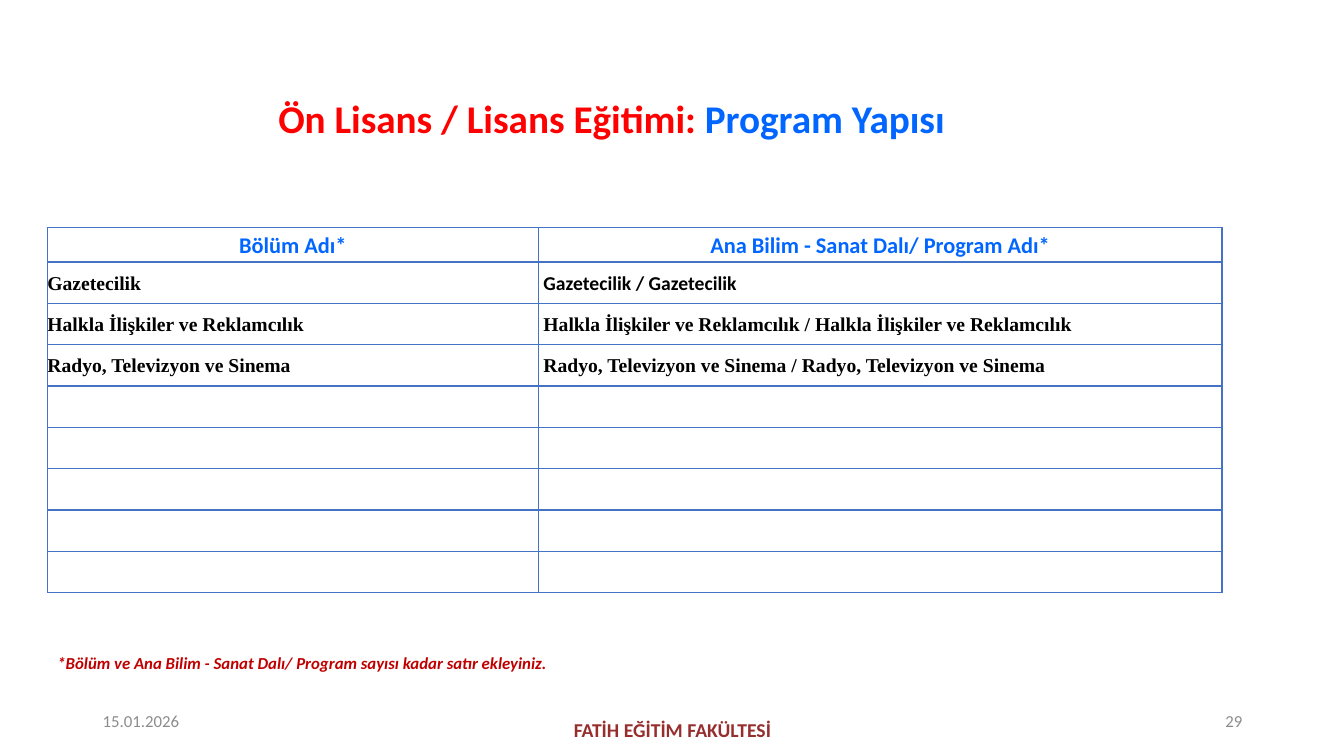
import pptx
import pptx.util
import pptx.dml.color
import pptx.enum.text
import pptx.oxml
import pptx.oxml.ns
from pptx.util import Inches

ALIGN = pptx.enum.text.PP_ALIGN
MIDDLE = pptx.enum.text.MSO_ANCHOR.MIDDLE
BLUE = "0066FF"
GREY = "8C8C8C"
BORDER = "4472C4"
HEADINGS = ["Bölüm Adı*", "Ana Bilim - Sanat Dalı/ Program Adı*"]
PROGRAMS = [
    ("Gazetecilik", "Gazetecilik / Gazetecilik", "Calibri"),
    ("Halkla İlişkiler ve Reklamcılık",
     "Halkla İlişkiler ve Reklamcılık / Halkla İlişkiler ve Reklamcılık", "Times New Roman"),
    ("Radyo, Televizyon ve Sinema",
     "Radyo, Televizyon ve Sinema / Radyo, Televizyon ve Sinema", "Times New Roman"),
]
ROW_COUNT = 9
COLUMN_WIDTHS = [4.87, 6.78]
HEADER_HEIGHT = 0.34
ROW_HEIGHT = 0.41


def color(value):
    return pptx.dml.color.RGBColor.from_string(value)


def format_run(run, size, fill, bold=False, italic=False, name="Calibri"):
    run.font.name = name
    run.font.size = pptx.util.Pt(size)
    run.font.color.rgb = color(fill)
    run.font.bold = bold
    run.font.italic = italic


def add_text(slide, left, top, width, height, text, size, fill,
             align=ALIGN.LEFT, anchor=MIDDLE, bold=False, italic=False):
    shape = slide.shapes.add_textbox(Inches(left), Inches(top), Inches(width), Inches(height))
    text_frame = shape.text_frame
    text_frame.word_wrap = True
    text_frame.vertical_anchor = anchor
    text_frame.text = text
    paragraph = text_frame.paragraphs[0]
    paragraph.alignment = align
    format_run(paragraph.runs[0], size, fill, bold, italic)
    return paragraph


def style_cell(cell):
    cell.fill.background()
    cell.vertical_anchor = MIDDLE
    cell.margin_left = cell.margin_right = cell.margin_top = cell.margin_bottom = 0
    properties = cell._tc.get_or_add_tcPr()
    for index, side in enumerate(["lnL", "lnR", "lnT", "lnB"]):
        properties.insert(index, pptx.oxml.parse_xml(
            f'<a:{side} {pptx.oxml.ns.nsdecls("a")} w="12700"><a:solidFill>'
            f'<a:srgbClr val="{BORDER}"/></a:solidFill></a:{side}>'))


def fill_cell(cell, text, size, fill, align=ALIGN.LEFT, name="Calibri"):
    cell.text_frame.text = text
    paragraph = cell.text_frame.paragraphs[0]
    paragraph.alignment = align
    paragraph.line_spacing = 1.07
    format_run(paragraph.runs[0], size, fill, bold=True, name=name)


def add_program_table(slide):
    height = HEADER_HEIGHT + ROW_HEIGHT * (ROW_COUNT - 1)
    table = slide.shapes.add_table(
        ROW_COUNT, len(COLUMN_WIDTHS), Inches(0.47), Inches(2.26),
        Inches(sum(COLUMN_WIDTHS)), Inches(height)).table
    table.first_row = False
    table.horz_banding = False
    for column, width in zip(table.columns, COLUMN_WIDTHS):
        column.width = Inches(width)
    for index, row in enumerate(table.rows):
        row.height = Inches(ROW_HEIGHT if index else HEADER_HEIGHT)
    for cell in table.iter_cells():
        style_cell(cell)
    for index, heading in enumerate(HEADINGS):
        fill_cell(table.cell(0, index), heading, 16, BLUE, ALIGN.CENTER)
    for index, (department, program, program_font) in enumerate(PROGRAMS, 1):
        fill_cell(table.cell(index, 0), department, 14, "000000", name="Times New Roman")
        program_cell = table.cell(index, 1)
        fill_cell(program_cell, program, 14, "000000", name=program_font)
        program_cell.margin_left = Inches(0.05)


def main():
    presentation = pptx.Presentation()
    presentation.slide_width = Inches(13.33)
    presentation.slide_height = Inches(7.5)
    slide = presentation.slides.add_slide(presentation.slide_layouts[6])
    add_text(slide, 4.42, 7.04, 4.5, 0.4, "FATİH EĞİTİM FAKÜLTESİ", 14, "962E2E",
             ALIGN.CENTER, bold=True)
    title = add_text(slide, 0.35, 0.84, 11.43, 0.71, "Ön Lisans / Lisans Eğitimi: ", 28,
                     "FF0000", ALIGN.CENTER, bold=True)
    title.line_spacing = 0.9
    topic = title.add_run()
    topic.text = "Program Yapısı"
    format_run(topic, 28, BLUE, bold=True)
    add_text(slide, 0.92, 6.95, 3, 0.4, "15.01.2026", 12, GREY)
    add_text(slide, 9.42, 6.95, 3, 0.4, "29", 12, GREY, ALIGN.RIGHT)
    add_program_table(slide)
    add_text(slide, 0.47, 6.43, 8.48, 0.3,
             "*Bölüm ve Ana Bilim - Sanat Dalı/ Program sayısı kadar satır ekleyiniz.",
             12, "C00000", anchor=pptx.enum.text.MSO_ANCHOR.TOP, bold=True, italic=True)
    presentation.save("out.pptx")


if __name__ == "__main__":
    main()
